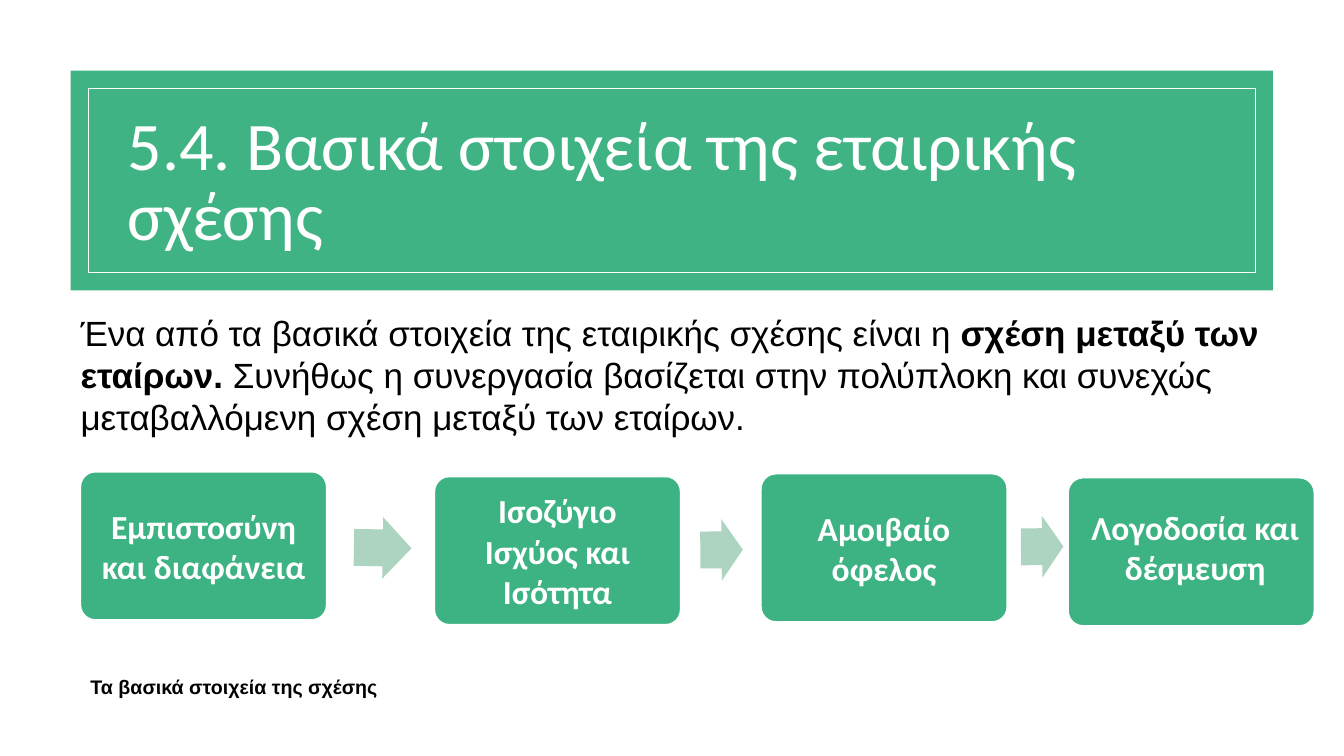
from pptx import Presentation
from pptx.dml.color import RGBColor
from pptx.enum.shapes import MSO_SHAPE as SHAPE
from pptx.enum.text import MSO_ANCHOR as ANCHOR, PP_ALIGN as ALIGN
from pptx.util import Cm, Pt

PANEL_GREEN = RGBColor(0x40, 0xB3, 0x85)
STEP_GREEN = RGBColor(0x3D, 0xB3, 0x84)
ARROW_GREEN = RGBColor(0xAC, 0xD4, 0xC0)
WHITE = RGBColor(0xFF, 0xFF, 0xFF)
BLACK = RGBColor(0x00, 0x00, 0x00)

STEP_SIZE = (6.2, 3.73)
EVEN_INSETS = (0.36, 0.36, 0.36, 0.36)

# text, left, top, insets (left, top, right, bottom)
STEPS = [
    ("Εμπιστοσύνη και διαφάνεια", 2.03, 11.89, EVEN_INSETS),
    ("Ισοζύγιο Ισχύος και Ισότητα", 10.95, 12.01, EVEN_INSETS),
    ("Αμοιβαίο όφελος", 19.18, 11.94, EVEN_INSETS),
    ("Λογοδοσία και δέσμευση", 26.92, 12.04, (0.4, 0.18, 0.2, 0.42)),
]
# left, top, width, rotation
ARROWS = [
    (8.92, 13.03, 1.45, 0.9),
    (17.65, 13.08, 1.07, 359.5),
    (25.73, 13.0, 1.07, 359.5),
]
BODY = [
    ("Ένα από τα βασικά στοιχεία της εταιρικής σχέσης είναι η ", False),
    ("σχέση μεταξύ των εταίρων.", True),
    (" Συνήθως η συνεργασία βασίζεται στην πολύπλοκη και συνεχώς "
     "μεταβαλλόμενη σχέση μεταξύ των εταίρων.", False),
]


def add_shape(slide, kind, box, fill=None, line=None, line_width=1):
    """Add a flat shape; without a fill or line colour that part is empty."""
    sp = slide.shapes.add_shape(kind, *map(Cm, box))
    sp.shadow.inherit = False
    if fill is None:
        sp.fill.background()
    else:
        sp.fill.solid()
        sp.fill.fore_color.rgb = fill
    if line is None:
        sp.line.fill.background()
    else:
        sp.line.color.rgb = line
        sp.line.width = Pt(line_width)
    return sp


def write(tf, runs, font, size, color):
    """Fill the first paragraph with (text, bold) runs."""
    tf.word_wrap = True
    p = tf.paragraphs[0]
    p.font.name, p.font.size = font, Pt(size)
    p.font.color.rgb = color
    for text, bold in runs:
        r = p.add_run()
        r.text = text
        r.font.bold = bold
    return p


def add_text(slide, box, runs, font, size, color):
    tf = slide.shapes.add_textbox(*map(Cm, box)).text_frame
    return tf, write(tf, runs, font, size, color)


def add_title(slide, text):
    add_shape(slide, SHAPE.RECTANGLE, (1.78, 1.78, 30.3, 5.54), PANEL_GREEN)
    add_shape(slide, SHAPE.RECTANGLE, (2.24, 2.24, 29.39, 4.62),
              line=WHITE, line_width=0.75)
    tf, p = add_text(slide, (2.97, 2.95, 27.89, 3.4), [(text, False)],
                     "Calibri", 48.6, WHITE)
    tf.vertical_anchor = ANCHOR.MIDDLE
    p.line_spacing = 0.85


def add_step(slide, text, left, top, insets):
    sp = add_shape(slide, SHAPE.ROUNDED_RECTANGLE, (left, top, *STEP_SIZE),
                   STEP_GREEN, WHITE)
    sp.adjustments[0] = 0.1
    tf = sp.text_frame
    tf.margin_left, tf.margin_top, tf.margin_right, tf.margin_bottom = map(Cm, insets)
    tf.vertical_anchor = ANCHOR.MIDDLE
    p = write(tf, [(text, True)], "Calibri", 24, WHITE)
    p.alignment = ALIGN.CENTER


def add_arrow(slide, left, top, width, rotation):
    sp = add_shape(slide, SHAPE.RIGHT_ARROW, (left, top, width, 1.55), ARROW_GREEN)
    sp.adjustments[0] = 0.6
    sp.adjustments[1] = 0.5
    sp.rotation = rotation


def main():
    prs = Presentation()
    prs.slide_width, prs.slide_height = Cm(33.87), Cm(19.05)
    slide = prs.slides.add_slide(prs.slide_layouts[6])

    add_title(slide, "5.4. Βασικά στοιχεία της εταιρικής σχέσης")
    add_text(slide, (1.78, 7.72, 30.3, 3.45), BODY, "Arial", 25, BLACK)
    for step in STEPS:
        add_step(slide, *step)
    for arrow in ARROWS:
        add_arrow(slide, *arrow)
    add_text(slide, (2.03, 16.89, 15.62, 0.86),
             [("Τα βασικά στοιχεία της σχέσης", True)], "Arial", 14, BLACK)

    prs.save("out.pptx")


if __name__ == "__main__":
    main()
